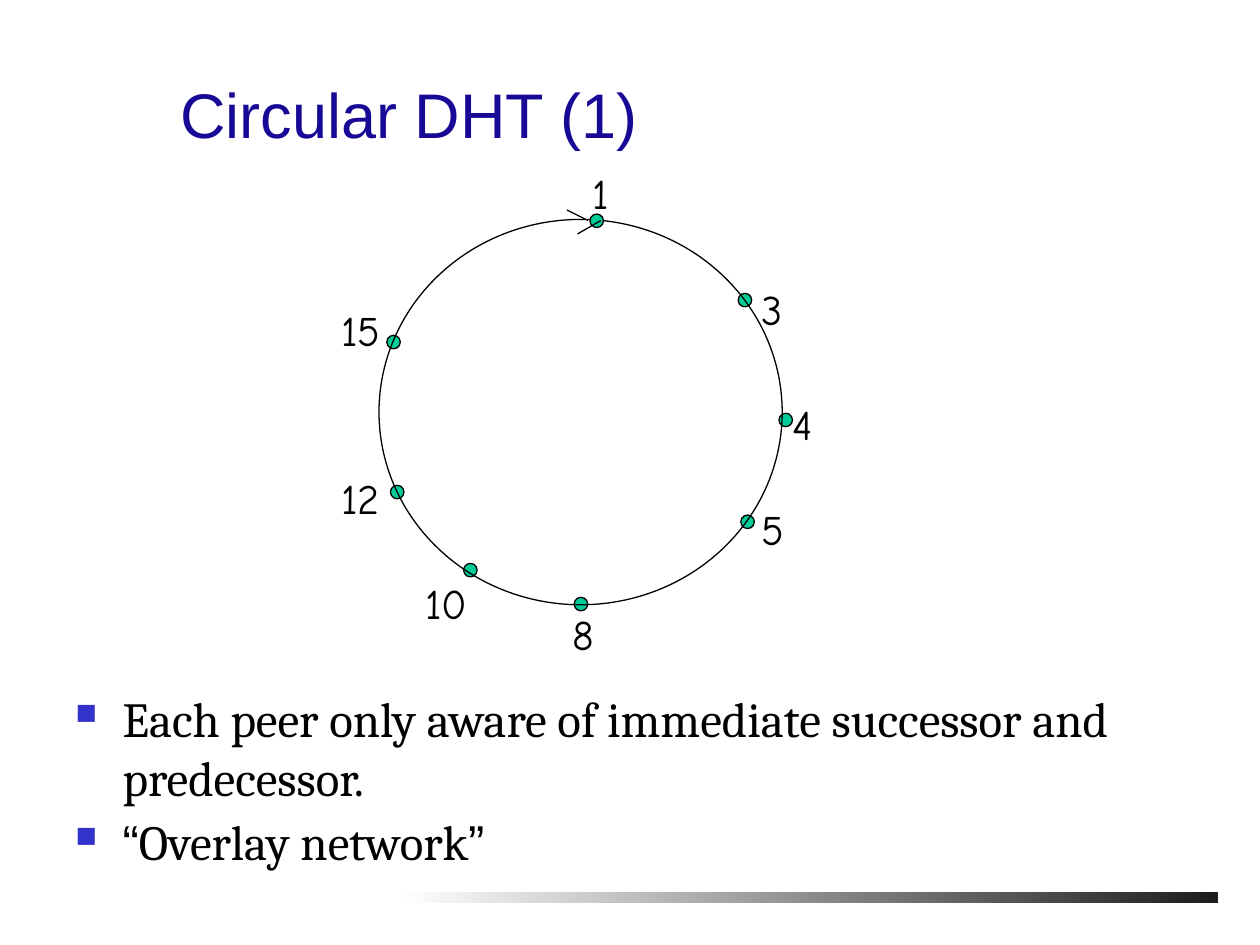
from lxml.etree import SubElement
from pptx import Presentation
from pptx.dml.color import RGBColor
from pptx.enum.shapes import MSO_CONNECTOR, MSO_SHAPE
from pptx.enum.text import MSO_ANCHOR, MSO_AUTO_SIZE
from pptx.oxml.ns import qn
from pptx.util import Pt

BLACK = RGBColor(0x00, 0x00, 0x00)
WHITE = RGBColor(0xFF, 0xFF, 0xFF)
CHARCOAL = RGBColor(0x1C, 0x1C, 0x1C)
NAVY = RGBColor(0x17, 0x09, 0x95)
GREEN = RGBColor(0x00, 0xCC, 0x99)
BULLET_BLUE = RGBColor(0x33, 0x33, 0xCC)

# Content
TITLE = "Circular DHT (1)"
BULLETS = [
    [("Each peer only aware of immediate successor and predecessor.", "Cambria")],
    [("“", "Arial"), ("Overlay network", "Cambria"), ("”", "Arial")],
]
# Peer id, centre of its dot, left/top/width of its label
PEERS = [
    ("8", (332, 345.2), (324, 348, 26.6)),
    ("15", (224.9, 195.5), (192, 174, 37.4)),
    ("12", (227, 281.2), (192, 270, 37.4)),
    ("3", (425.7, 171.5), (432, 162, 26.6)),
    ("4", (449, 240), (450, 228, 26.6)),
    ("5", (427.2, 298.2), (432, 288, 26.6)),
    ("10", (268.8, 325.8), (240, 330, 37.4)),
    ("1", (341, 126.2), (335.5, 95.8, 23)),
]
ARROW_STROKES = [(324, 120, 336, 126), (343.4, 126, 330, 133.7)]
RING = (216.6, 125.4, 230.4, 220.2)
DOT = 7.7
LABEL_HEIGHT = 41

prs = Presentation()
prs.slide_width, prs.slide_height = Pt(720), Pt(540)
s = prs.slides.add_slide(prs.slide_layouts[6])


def add_shape(kind, box):
    sp = s.shapes.add_shape(kind, *map(Pt, box))
    sp.shadow.inherit = False
    return sp


def add_oval(box, color=None):
    sp = add_shape(MSO_SHAPE.OVAL, box)
    if color is None:
        sp.fill.background()
    else:
        sp.fill.solid()
        sp.fill.fore_color.rgb = color
    sp.line.color.rgb = BLACK
    sp.line.width = Pt(0.75)


def add_box(box, **settings):
    tf = s.shapes.add_textbox(*map(Pt, box)).text_frame
    for name, value in settings.items():
        setattr(tf, name, value)
    return tf


def add_run(p, text, font, size, color):
    r = p.add_run()
    r.text = text
    r.font.name, r.font.size = font, Pt(size)
    r.font.color.rgb = color


# Gradient footer bar
bar = add_shape(MSO_SHAPE.RECTANGLE, (228, 509.8, 468, 6))
bar.line.fill.background()
bar.fill.gradient()
bar.fill.gradient_angle = 0
for stop, (position, color) in zip(bar.fill.gradient_stops, [(0, WHITE), (1, CHARCOAL)]):
    stop.position = position
    stop.color.rgb = color

# Peers on the ring; the ring crosses every dot but that of peer 1
for peer, (x, y), _ in PEERS:
    if peer == "1":
        add_oval(RING)
    add_oval((x - DOT / 2, y - DOT / 2, DOT, DOT), GREEN)

# Peer labels
for peer, _, (x, y, w) in PEERS:
    tf = add_box((x, y, w, LABEL_HEIGHT), word_wrap=False,
                 auto_size=MSO_AUTO_SIZE.SHAPE_TO_FIT_TEXT, margin_left=0,
                 margin_top=0, margin_right=Pt(3), margin_bottom=0)
    p = tf.paragraphs[0]
    p._p.get_or_add_pPr().set("marL", str(Pt(3)))
    add_run(p, peer, "Comic Neue", 24, BLACK)

# Arrow at the top of the ring
for stroke in ARROW_STROKES:
    line = s.shapes.add_connector(MSO_CONNECTOR.STRAIGHT, *map(Pt, stroke))
    line.line.color.rgb = BLACK
    line.line.width = Pt(0.75)
    SubElement(line._element.spPr, qn("a:effectLst"))

# Title
tf = add_box((96, 42, 612, 48), word_wrap=True, vertical_anchor=MSO_ANCHOR.BOTTOM,
             margin_right=Pt(10))
add_run(tf.paragraphs[0], TITLE, "Arial", 36, NAVY)

# Bullets
tf = add_box((36, 390, 648, 150), word_wrap=True, margin_right=Pt(10))
for i, runs in enumerate(BULLETS):
    p = tf.add_paragraph() if i else tf.paragraphs[0]
    if i:
        p.space_before = Pt(3)
    pPr = p._p.get_or_add_pPr()
    pPr.set("marL", str(Pt(27)))
    pPr.set("indent", str(-Pt(27)))
    SubElement(SubElement(pPr, qn("a:buClr")), qn("a:srgbClr"), val=str(BULLET_BLUE))
    SubElement(pPr, qn("a:buSzPct"), val="60000")
    SubElement(pPr, qn("a:buChar"), char="■")
    for text, font in runs:
        add_run(p, text, font, 28, BLACK)

prs.save("out.pptx")
